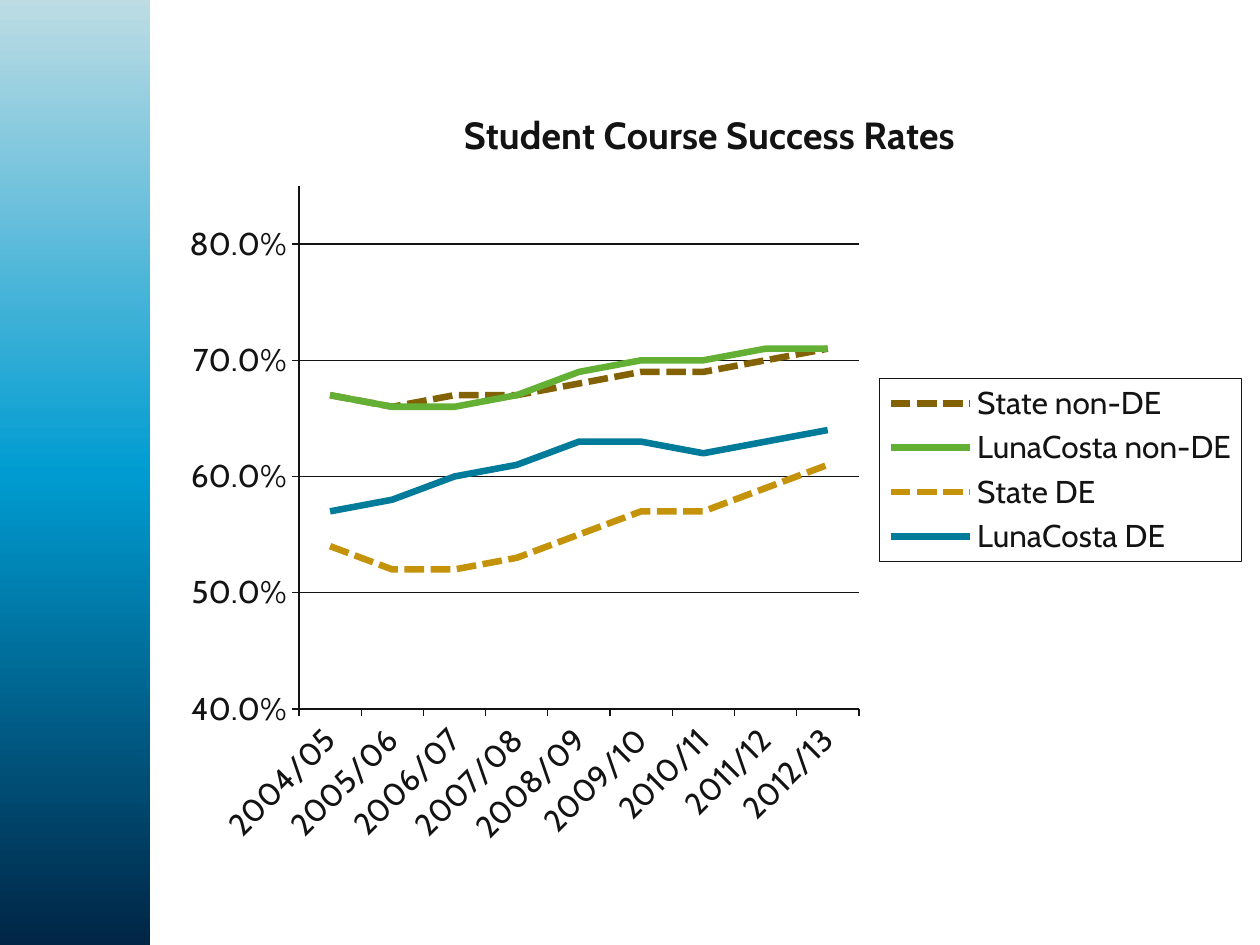
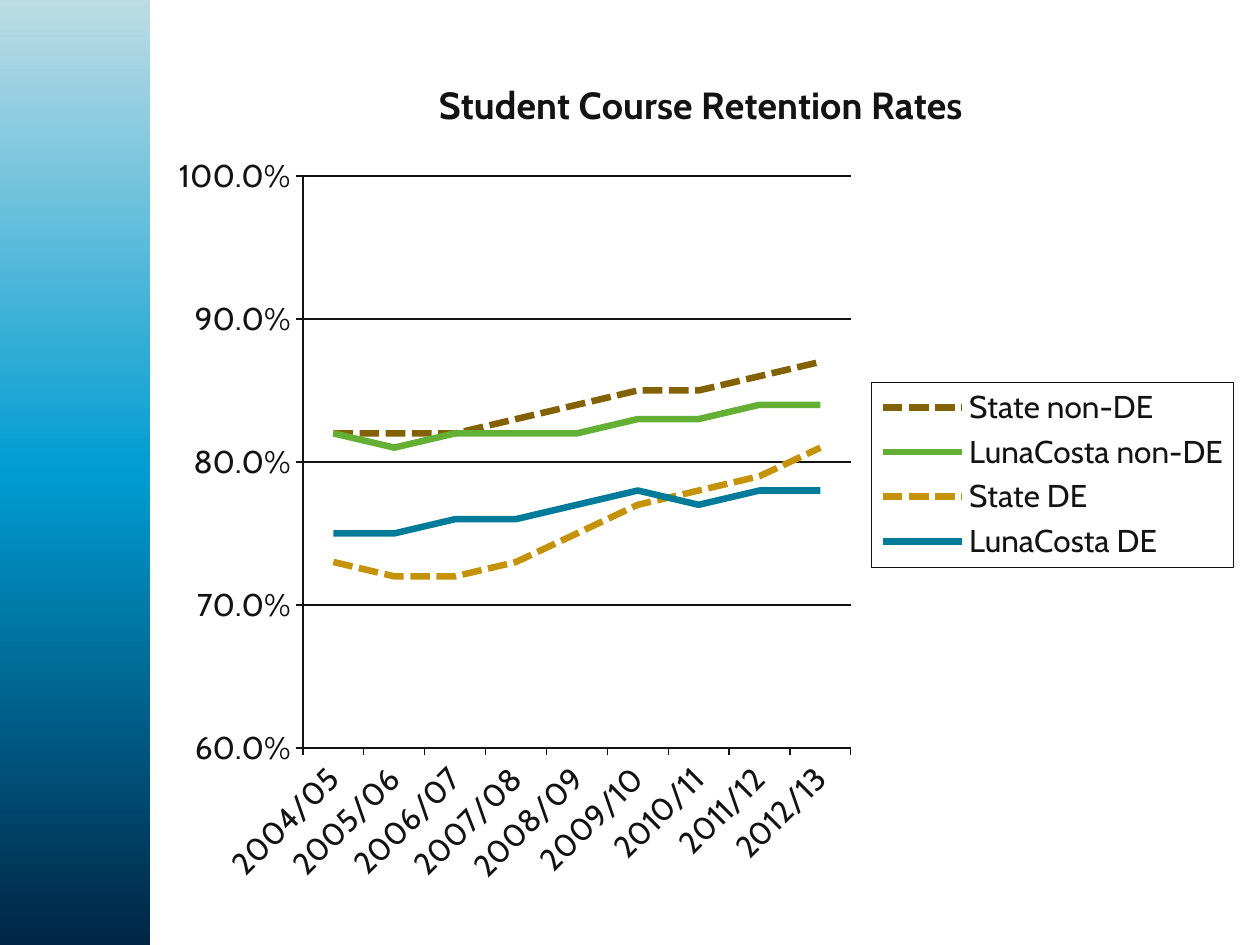
"""Build two slides charting student course success and retention rates."""
from lxml import etree
from pptx import Presentation
from pptx.chart.data import CategoryChartData
from pptx.dml.color import RGBColor
from pptx.enum.chart import XL_CHART_TYPE, XL_LEGEND_POSITION, XL_TICK_MARK
from pptx.enum.dml import MSO_LINE
from pptx.enum.shapes import MSO_SHAPE
from pptx.oxml import parse_xml
from pptx.oxml.ns import nsdecls, qn
from pptx.util import Pt

PX = 914400 / 126
WIDTH, HEIGHT = 1260, 945
FONT = "Cabin"
COLORS = {
    "text": "131313",
    "navy": "002545",
    "blue": "009CD1",
    "pale": "BDDCE4",
    "state_non_de": "836206",
    "college_non_de": "64B034",
    "state_de": "C59309",
    "college_de": "007B99",
}
SERIES = [
    ("State non-DE", "state_non_de", True),
    ("LunaCosta non-DE", "college_non_de", False),
    ("State DE", "state_de", True),
    ("LunaCosta DE", "college_de", False),
]
YEARS = [f"{y}/{(y + 1) % 100:02d}" for y in range(2004, 2013)]
CHARTS = [
    {
        "title": "Student Course Success Rates",
        "frame": (168, 79, 1084, 781),
        "title_at": (457, 101),
        "plot": (299, 186, 560, 523),
        "legend": (880, 378, 362, 184),
        "scale": (0.4, 0.85),
        "values": [
            (0.67, 0.66, 0.67, 0.67, 0.68, 0.69, 0.69, 0.7, 0.71),
            (0.67, 0.66, 0.66, 0.67, 0.69, 0.7, 0.7, 0.71, 0.71),
            (0.54, 0.52, 0.52, 0.53, 0.55, 0.57, 0.57, 0.59, 0.61),
            (0.57, 0.58, 0.6, 0.61, 0.63, 0.63, 0.62, 0.63, 0.64),
        ],
    },
    {
        "title": "Student Course Retention Rates",
        "frame": (158, 48, 1086, 854),
        "title_at": (432, 71),
        "plot": (303, 176, 548, 572),
        "legend": (872, 382, 362, 185),
        "scale": (0.6, 1),
        "values": [
            (0.82, 0.82, 0.82, 0.83, 0.84, 0.85, 0.85, 0.86, 0.87),
            (0.82, 0.81, 0.82, 0.82, 0.82, 0.83, 0.83, 0.84, 0.84),
            (0.73, 0.72, 0.72, 0.73, 0.75, 0.77, 0.78, 0.79, 0.81),
            (0.75, 0.75, 0.76, 0.76, 0.77, 0.78, 0.77, 0.78, 0.78),
        ],
    },
]


def write(tf, text, size=18, bold=False, color="text"):
    """Put one formatted run of text into a text frame."""
    r = tf.paragraphs[0].add_run()
    r.text = text
    r.font.name, r.font.size, r.font.bold = FONT, Pt(size), bold
    r.font.color.rgb = RGBColor.from_string(COLORS[color])


def place(el, index, box, frame, inner=False):
    """Give a chart part a manual layout from slide pixels."""
    for old in el.findall(qn("c:layout")):
        el.remove(old)
    layout = parse_xml(f"<c:layout {nsdecls('c')}><c:manualLayout/></c:layout>")
    left, top, width, height = frame
    parts = [("layoutTarget", "inner")] if inner else []
    parts += [("xMode", "edge"), ("yMode", "edge")]
    shares = [(box[0] - left) / width, (box[1] - top) / height]
    shares += [n / whole for n, whole in zip(box[2:], (width, height))]
    parts += [(k, f"{v:.4f}") for k, v in zip("xywh", shares)]
    for tag, val in parts:
        etree.SubElement(layout[0], qn(f"c:{tag}")).set("val", val)
    el.insert(index, layout)


prs = Presentation()
prs.slide_width, prs.slide_height = int(WIDTH * PX), int(HEIGHT * PX)
blank = prs.slide_layouts[6]
slides = [prs.slides.add_slide(blank) for _ in CHARTS]
text_rgb = RGBColor.from_string(COLORS["text"])

band = slides[0].shapes.add_shape(MSO_SHAPE.RECTANGLE, 0, 0, int(150 * PX), prs.slide_height)
band.shadow.inherit = False
band.line.fill.background()
band.fill.gradient()
grad = band.element.spPr.find(qn("a:gradFill"))
stops = "".join(
    f'<a:gs pos="{pos}"><a:srgbClr val="{COLORS[name]}"/></a:gs>'
    for pos, name in ((0, "navy"), (50000, "blue"), (100000, "pale"))
)
grad.getparent().replace(grad, parse_xml(
    f'<a:gradFill {nsdecls("a")} rotWithShape="1"><a:gsLst>{stops}</a:gsLst>'
    '<a:lin ang="16200000" scaled="0"/></a:gradFill>'
))
blank.shapes.element.append(band.element)

for s, rates in zip(slides, CHARTS):
    frame = rates["frame"]
    data = CategoryChartData(number_format="0.0%")
    data.categories = YEARS
    for (name, _, _), values in zip(SERIES, rates["values"]):
        data.add_series(name, values)
    box = [int(n * PX) for n in frame]
    chart = s.shapes.add_chart(XL_CHART_TYPE.LINE, *box, data).chart
    chart.font.name, chart.font.size = FONT, Pt(18)
    chart.font.color.rgb = text_rgb

    chart.has_title = True
    write(chart.chart_title.text_frame, rates["title"], size=21.6, bold=True)
    chart.chart_title.include_in_layout = False
    place(chart.element.find(".//" + qn("c:title")), 1, rates["title_at"], frame)

    plot = chart.plots[0]
    plot.vary_by_categories = False
    place(chart.element.find(".//" + qn("c:plotArea")), 0, rates["plot"], frame, inner=True)
    for ser, (_, color, dashed) in zip(plot.series, SERIES):
        ser.smooth = False
        ser.format.line.width = Pt(3.75)
        ser.format.line.color.rgb = RGBColor.from_string(COLORS[color])
        if dashed:
            ser.format.line.dash_style = MSO_LINE.SQUARE_DOT

    val, cat = chart.value_axis, chart.category_axis
    val.minimum_scale, val.maximum_scale = rates["scale"]
    val.major_unit = 0.1
    val.has_major_gridlines = True
    val.tick_labels.number_format = "0.0%"
    val.tick_labels.number_format_is_linked = False
    for axis in (val, cat):
        axis.major_tick_mark = XL_TICK_MARK.OUTSIDE
        font = axis.tick_labels.font
        font.name, font.size = FONT, Pt(18)
        font.color.rgb = text_rgb
    for line in (val.format.line, cat.format.line, val.major_gridlines.format.line):
        line.width = Pt(0.75)
        line.color.rgb = text_rgb
    cat_el = chart.element.find(".//" + qn("c:catAx"))
    cat_el.find(qn("c:txPr")).find(qn("a:bodyPr")).set("rot", "-2700000")

    chart.has_legend = True
    legend = chart.legend
    legend.position = XL_LEGEND_POSITION.RIGHT
    legend.include_in_layout = False
    legend.font.name, legend.font.size = FONT, Pt(18)
    legend.font.color.rgb = text_rgb
    legend_el = chart.element.find(".//" + qn("c:legend"))
    place(legend_el, 1, rates["legend"], frame)
    legend_el.find(qn("c:txPr")).addprevious(parse_xml(
        f'<c:spPr {nsdecls("c", "a")}><a:ln w="6350"><a:solidFill>'
        f'<a:srgbClr val="{COLORS["text"]}"/></a:solidFill></a:ln></c:spPr>'
    ))

prs.save("out.pptx")
